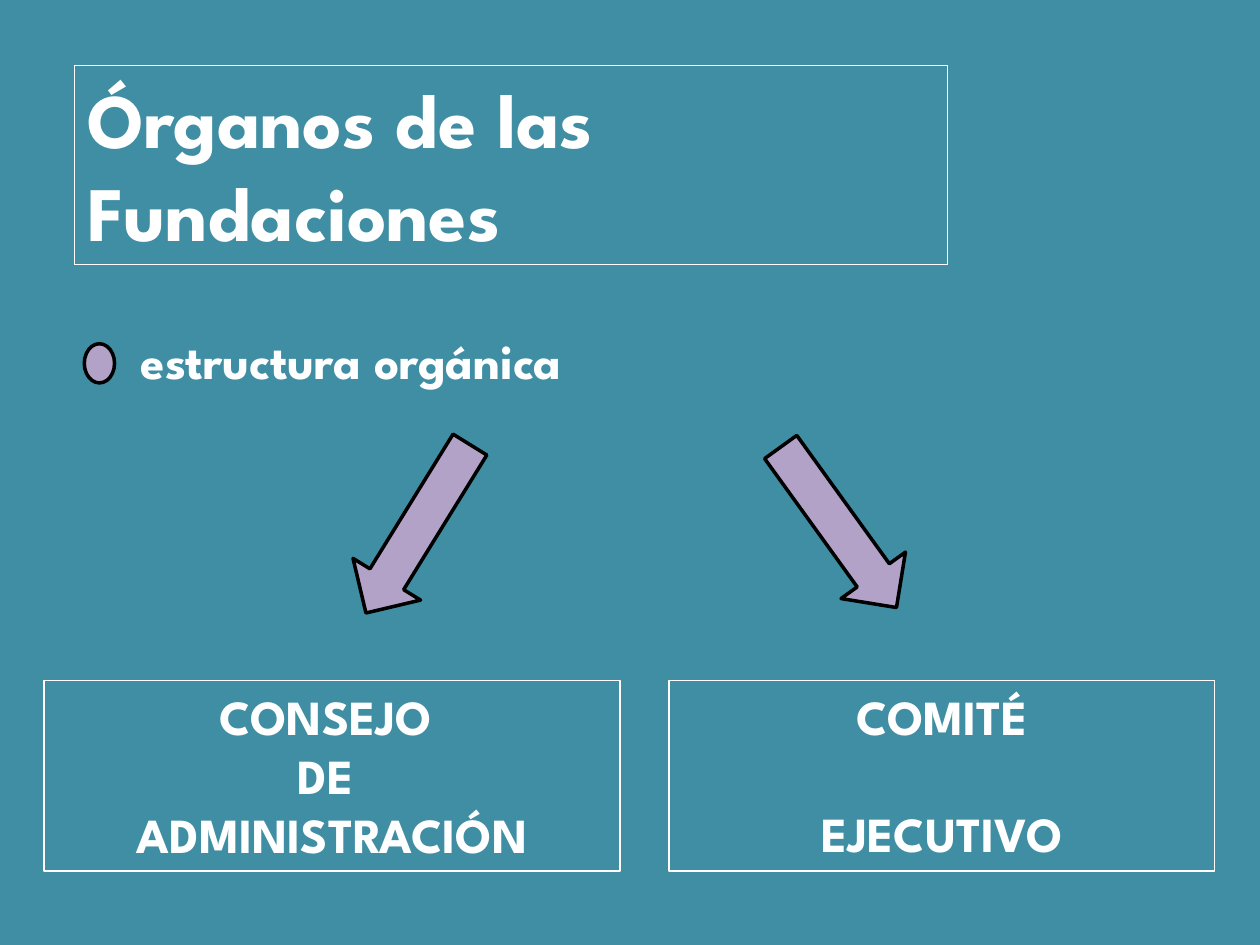
from pptx import Presentation
from pptx.dml.color import RGBColor
from pptx.enum.shapes import MSO_SHAPE as Shape
from pptx.enum.text import MSO_ANCHOR as Anchor, MSO_AUTO_SIZE as AutoSize, PP_ALIGN as Align
from pptx.util import Cm, Pt

TEAL = RGBColor(0x3F, 0x8E, 0xA3)
LILAC = RGBColor(0xB3, 0xA2, 0xC7)
WHITE = RGBColor(0xFF, 0xFF, 0xFF)
BLACK = RGBColor(0, 0, 0)
FONT = "League Spartan"
BODY_SIZE = 28
SKIPPED_LINE = Pt(33)


def place(shape, left, top, width, height):
    shape.left, shape.top = Cm(left), Cm(top)
    shape.width, shape.height = Cm(width), Cm(height)


def outline(shape, color, width):
    shape.line.color.rgb = color
    shape.line.width = Pt(width)


def write(shape, lines, size=BODY_SIZE, align=Align.LEFT):
    frame = shape.text_frame
    frame.word_wrap = True
    frame.auto_size = AutoSize.NONE
    frame.vertical_anchor = Anchor.TOP
    frame.text = "\n".join(lines)
    for paragraph in frame.paragraphs:
        paragraph.alignment = align
        font = paragraph.font
        font.name, font.size, font.bold = FONT, Pt(size), True
        font.color.rgb = WHITE


def add_title(slide, text):
    title = slide.shapes.title
    place(title, 1.5, 1.32, 17.6, 4.01)
    outline(title, WHITE, 0.75)
    write(title, [text], size=44)


def add_label(slide, text, *box):
    label = slide.shapes.add_textbox(*map(Cm, box))
    write(label, [text])


def add_organ_box(slide, lines, left, width):
    shape = slide.shapes.add_shape(Shape.RECTANGLE, Cm(left), Cm(13.72), Cm(width), Cm(3.84))
    shape.shadow.inherit = False
    shape.fill.background()
    outline(shape, WHITE, 0.75)
    write(shape, lines, align=Align.CENTER)
    return shape


def add_lilac_shape(slide, kind, left, top, width, height, rotation=0):
    shape = slide.shapes.add_shape(kind, Cm(left), Cm(top), Cm(width), Cm(height))
    shape.shadow.inherit = False
    shape.fill.solid()
    shape.fill.fore_color.rgb = LILAC
    outline(shape, BLACK, 2)
    shape.rotation = rotation


def main():
    presentation = Presentation()
    presentation.slide_width, presentation.slide_height = Cm(25.4), Cm(19.05)
    slide = presentation.slides.add_slide(presentation.slide_layouts[5])
    slide.background.fill.solid()
    slide.background.fill.fore_color.rgb = TEAL

    add_title(slide, "Órganos de las Fundaciones")
    add_label(slide, "estructura orgánica", 2.59, 6.53, 21.2, 1.45)

    add_organ_box(slide, ["CONSEJO ", "DE ", "ADMINISTRACIÓN"], 0.89, 11.61)
    committee = add_organ_box(slide, ["COMITÉ", "EJECUTIVO"], 13.49, 11)
    committee.text_frame.paragraphs[1].space_before = SKIPPED_LINE

    for left, top, rotation in [(6.43, 9.86, 121.7), (14.91, 9.83, 54.2)]:
        add_lilac_shape(slide, Shape.RIGHT_ARROW, left, top, 3.99, 1.6, rotation)
    add_lilac_shape(slide, Shape.OVAL, 1.7, 6.93, 0.61, 0.79)

    presentation.save("out.pptx")


if __name__ == "__main__":
    main()
